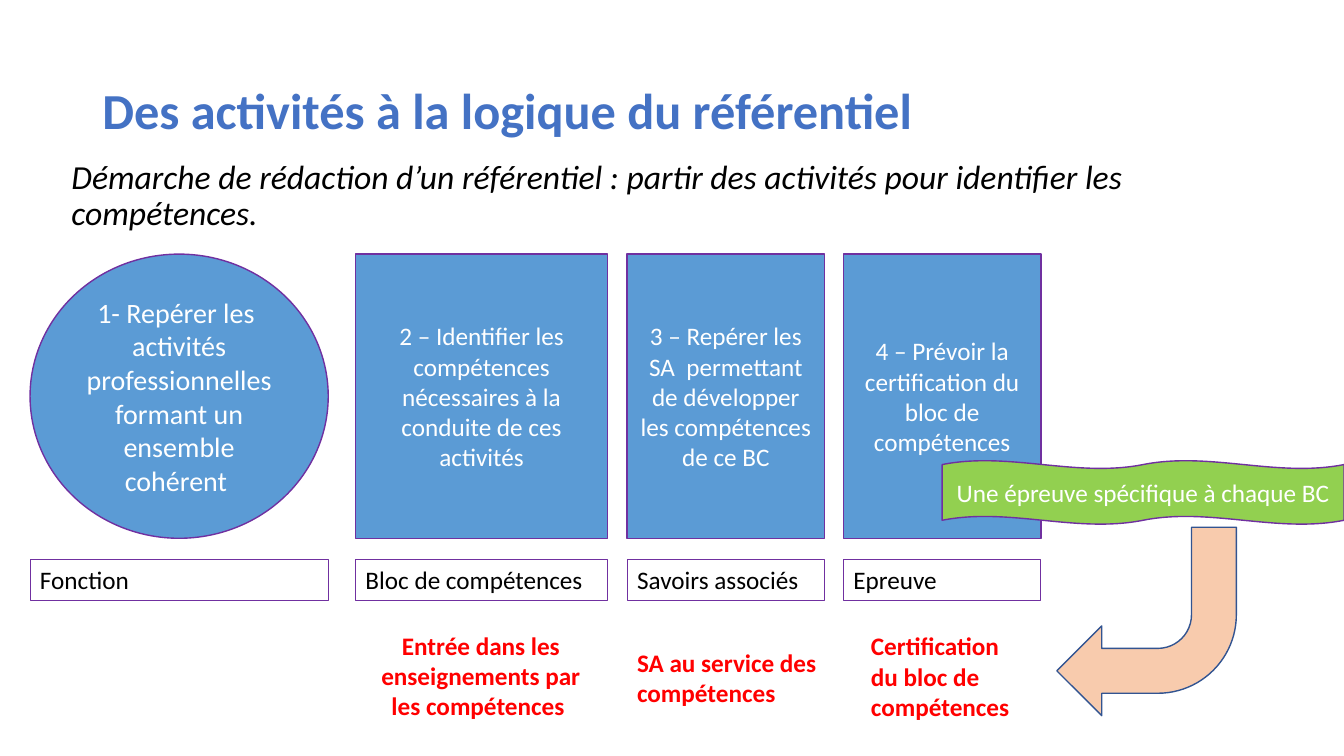
"""Build the slide that leads from activities to the logic of the framework."""
from dataclasses import dataclass

from pptx import Presentation
from pptx.dml.color import RGBColor
from pptx.enum.shapes import MSO_SHAPE
from pptx.enum.text import MSO_ANCHOR, MSO_AUTO_SIZE, PP_ALIGN
from pptx.util import Pt


@dataclass(frozen=True)
class Theme:
    """Colours and type sizes of the slide."""
    font: str = "Calibri"
    title: str = "4472C4"
    ink: str = "000000"
    light: str = "FFFFFF"
    alert: str = "FF0000"
    step: str = "5B9BD5"
    banner: str = "92D050"
    arrow: str = "F8CBAD"
    border: str = "7030A0"
    arrow_border: str = "325491"
    title_size: float = 36
    lead_size: float = 24
    circle_size: float = 20
    body_size: float = 18


THEME = Theme()
STEP_TOP, STEP_HEIGHT = 181.5, 203
LABEL_TOP, LABEL_HEIGHT = 399.6, 29.1

STEPS = [
    (21.5, 213, "1- Repérer les  activités professionnelles formant un ensemble cohérent ",
     "Fonction", MSO_SHAPE.FLOWCHART_CONNECTOR, THEME.circle_size),
    (254, 180, "2 – Identifier les compétences nécessaires à la conduite de ces activités",
     "Bloc de compétences", MSO_SHAPE.RECTANGLE, THEME.body_size),
    (448, 141, "3 – Repérer les SA  permettant de développer les compétences de ce BC",
     "Savoirs associés", MSO_SHAPE.RECTANGLE, THEME.body_size),
    (602.5, 141, "4 – Prévoir la certification du bloc de compétences",
     "Epreuve", MSO_SHAPE.RECTANGLE, THEME.body_size),
]

OUTCOMES = [
    ((253.5, 446.5, 180, 72.7), "Entrée dans les enseignements par les compétences ",
     PP_ALIGN.CENTER),
    ((448, 458.5, 155, 50.9), "SA au service des compétences", PP_ALIGN.LEFT),
    ((615, 447, 129, 72.7), "Certification du bloc de compétences", PP_ALIGN.LEFT),
]


def write(box, text, size, color, align=PP_ALIGN.LEFT, anchor=MSO_ANCHOR.TOP,
          bold=False, italic=False):
    """Put one formatted paragraph in a box and return it."""
    frame = box.text_frame
    frame.word_wrap = True
    frame.vertical_anchor = anchor
    frame.text = text
    para = frame.paragraphs[0]
    para.alignment = align
    for span in para.runs:
        span.font.name = THEME.font
        span.font.size = Pt(size)
        span.font.color.rgb = RGBColor.from_string(color)
        span.font.bold = bold
        span.font.italic = italic
    return para


def add_text(page, area, text, size, color, **style):
    """Add a text box and return its paragraph."""
    box = page.shapes.add_textbox(*map(Pt, area))
    return write(box, text, size, color, **style)


def add_figure(page, kind, area, fill=None, border=THEME.border, weight=1):
    """Add an outlined preset shape, filled when a colour is given."""
    box = page.shapes.add_shape(kind, *map(Pt, area))
    box.shadow.inherit = False
    if fill:
        box.fill.solid()
        box.fill.fore_color.rgb = RGBColor.from_string(fill)
    else:
        box.fill.background()
    box.line.color.rgb = RGBColor.from_string(border)
    box.line.width = Pt(weight)
    return box


def add_step(page, left, width, text, label, kind, size):
    """Add one step with its label underneath."""
    step = add_figure(page, kind, (left, STEP_TOP, width, STEP_HEIGHT), THEME.step)
    write(step, text, size, THEME.light, PP_ALIGN.CENTER, MSO_ANCHOR.MIDDLE)
    tag = add_figure(page, MSO_SHAPE.RECTANGLE,
                     (left, LABEL_TOP, width, LABEL_HEIGHT), weight=0.75)
    write(tag, label, THEME.body_size, THEME.ink)
    tag.text_frame.auto_size = MSO_AUTO_SIZE.SHAPE_TO_FIT_TEXT


def add_heading(page):
    """Add the title and the lead sentence."""
    title = add_text(page, (66, 28.75, 828, 104.4),
                     "Des activités à la logique du référentiel",
                     THEME.title_size, THEME.title, anchor=MSO_ANCHOR.MIDDLE, bold=True)
    title.line_spacing = 0.9
    lead = add_text(page, (44, 111, 828, 343),
                    "Démarche de rédaction d’un référentiel : partir des activités "
                    "pour identifier les compétences.",
                    THEME.lead_size, THEME.ink, italic=True)
    lead.line_spacing = 0.9
    lead.space_before = Pt(10)


def main():
    """Build and save the deck."""
    deck = Presentation()
    deck.slide_width, deck.slide_height = Pt(960), Pt(540)
    page = deck.slides.add_slide(deck.slide_layouts[6])
    add_heading(page)
    for step in STEPS:
        add_step(page, *step)
    banner = add_figure(page, MSO_SHAPE.DOUBLE_WAVE, (673, 329, 287, 45.5), THEME.banner)
    write(banner, "Une épreuve spécifique à chaque BC", THEME.body_size, THEME.light,
          PP_ALIGN.CENTER, MSO_ANCHOR.MIDDLE)
    for area, text, align in OUTCOMES:
        add_text(page, area, text, THEME.body_size, THEME.alert, align=align, bold=True)
    arrow = add_figure(page, MSO_SHAPE.BENT_ARROW, (754.9, 376.6, 128.2, 134.6),
                       THEME.arrow, THEME.arrow_border)
    arrow.rotation = 180
    deck.save("out.pptx")


if __name__ == "__main__":
    main()
